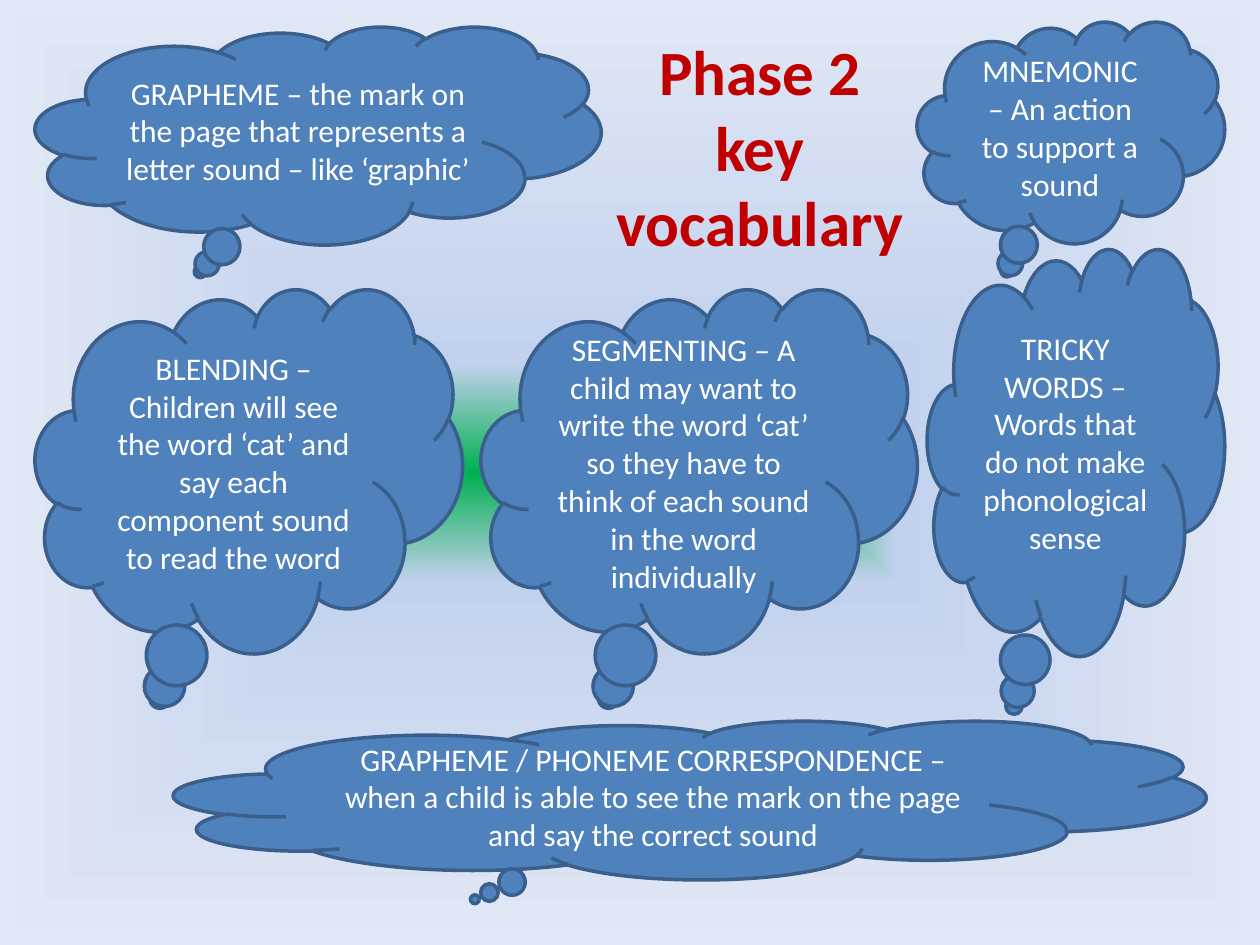
import pptx
import pptx.dml.color
import pptx.enum.shapes
import pptx.enum.text
import pptx.oxml
import pptx.oxml.ns
import pptx.util
from pptx.util import Inches

COLORS = {
    "cloud": "4F81BD", "edge": "3A5F8C", "text": "FFFFFF",
    "title": "C00000", "title_edge": "D73A36",
    "bg_core": "00B050", "bg_mid": "C2D1ED", "bg_rim": "E1E8F5",
}
NS = pptx.oxml.ns.nsdecls("a")


def rgb(name):
    return pptx.dml.color.RGBColor.from_string(COLORS[name])


class SlideBuilder:
    font = "Calibri"

    def __init__(self, slide):
        self.slide = slide

    def background(self, stops):
        """Gradient spreading from the slide centre; stops are (percent, colour)."""
        self.slide.background.fill.gradient()
        grad = next(self.slide.element.iter(pptx.oxml.ns.qn("a:gradFill")))
        stop_xml = "".join(
            f'<a:gs pos="{pos * 1000}"><a:srgbClr val="{COLORS[name]}"/></a:gs>'
            for pos, name in stops)
        new = pptx.oxml.parse_xml(
            f'<a:gradFill {NS} rotWithShape="1"><a:gsLst>{stop_xml}</a:gsLst>'
            '<a:path path="shape"><a:fillToRect l="50000" t="50000" r="50000" b="50000"/>'
            '</a:path></a:gradFill>')
        grad.getparent().replace(grad, new)

    def set_text(self, tf, text, size, color, bold=False):
        tf.word_wrap = True
        p = tf.paragraphs[0]
        p.alignment = pptx.enum.text.PP_ALIGN.CENTER
        p.font.name, p.font.size, p.font.bold = self.font, pptx.util.Pt(size), bold
        p.font.color.rgb = rgb(color)
        r = p.add_run()
        r.text = text
        return r

    def cloud(self, text, *box):
        sp = self.slide.shapes.add_shape(
            pptx.enum.shapes.MSO_SHAPE.CLOUD_CALLOUT, *map(Inches, box))
        sp.shadow.inherit = False
        sp.fill.solid()
        sp.fill.fore_color.rgb = rgb("cloud")
        sp.line.color.rgb = rgb("edge")
        sp.line.width = pptx.util.Pt(2)
        sp.text_frame.vertical_anchor = pptx.enum.text.MSO_ANCHOR.MIDDLE
        self.set_text(sp.text_frame, text, 18, "text")

    def title(self, text, *box):
        tf = self.slide.shapes.add_textbox(*map(Inches, box)).text_frame
        tf.auto_size = pptx.enum.text.MSO_AUTO_SIZE.SHAPE_TO_FIT_TEXT
        r = self.set_text(tf, text, 36, "title", bold=True)
        # Thin outline around the letters
        r._r.get_or_add_rPr().insert(0, pptx.oxml.parse_xml(
            f'<a:ln {NS} w="{pptx.util.Pt(1.42)}"><a:solidFill>'
            f'<a:srgbClr val="{COLORS["title_edge"]}"/></a:solidFill></a:ln>'))


def main():
    prs = pptx.Presentation()
    prs.slide_width, prs.slide_height = Inches(10), Inches(7.5)
    s = SlideBuilder(prs.slides.add_slide(prs.slide_layouts[6]))
    s.background([(0, "bg_core"), (23, "bg_mid"), (100, "bg_rim")])

    # Vocabulary clouds
    clouds = [
        ("GRAPHEME – the mark on the page that represents a letter sound – like ‘graphic’",
         0.28, 0.21, 4.49, 1.73),
        ("BLENDING – Children will see the word ‘cat’ and say each component sound "
         "to read the word", 0.28, 2.29, 3.39, 2.89),
        ("GRAPHEME / PHONEME CORRESPONDENCE – when a child is able to see the mark "
         "on the page and say the correct sound", 1.38, 5.72, 8.19, 1.26),
        ("SEGMENTING – A child may want to write the word ‘cat’ so they have to think "
         "of each sound in the word individually", 3.82, 2.29, 3.46, 2.89),
        ("TRICKY WORDS – Words that do not make phonological sense",
         7.36, 1.97, 2.36, 3.23),
        ("MNEMONIC – An action to support a sound", 7.28, 0.17, 2.44, 1.76),
    ]
    for text, *box in clouds:
        s.cloud(text, *box)

    # Heading
    s.title("Phase 2 key vocabulary", 4.78, 0.21, 2.5, 1.92)

    prs.save("out.pptx")


if __name__ == "__main__":
    main()
